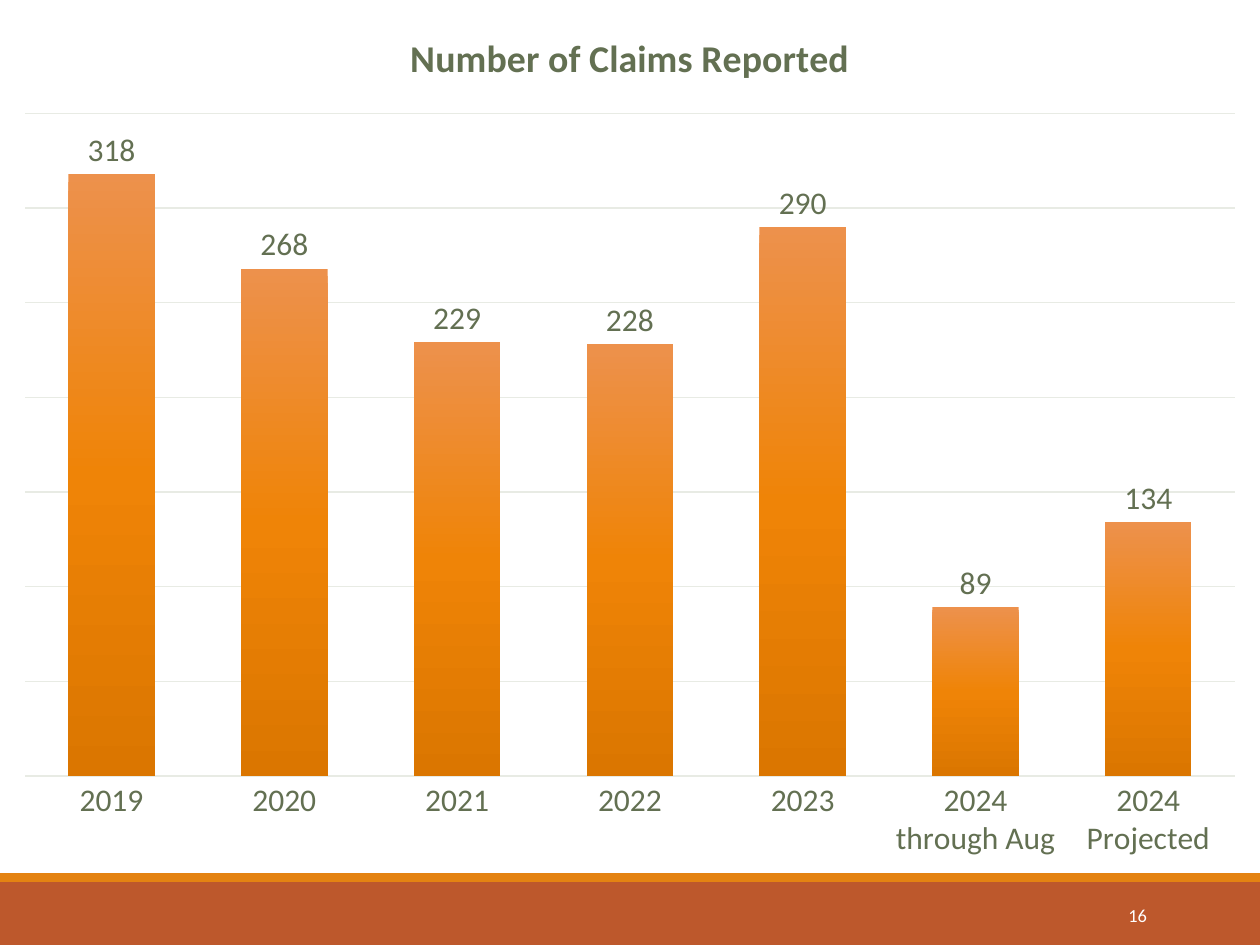
from lxml import etree
from pptx import Presentation
from pptx.chart.data import CategoryChartData
from pptx.dml.color import RGBColor
from pptx.enum.chart import XL_CHART_TYPE, XL_LABEL_POSITION, XL_TICK_MARK
from pptx.enum.shapes import MSO_SHAPE
from pptx.enum.text import MSO_ANCHOR, PP_ALIGN
from pptx.oxml.ns import qn
from pptx.util import Inches, Pt

COLUMNS = XL_CHART_TYPE.COLUMN_CLUSTERED
OUTSIDE_END = XL_LABEL_POSITION.OUTSIDE_END
NO_TICK = XL_TICK_MARK.NONE
RECTANGLE = MSO_SHAPE.RECTANGLE
MIDDLE = MSO_ANCHOR.MIDDLE
RIGHT = PP_ALIGN.RIGHT

FONT = "Calibri"
GREEN, PALE, WHITE = "637052", "E8EBE4", "FFFFFF"
RUST, ORANGE = "BD582C", "E48312"
COLUMN_STOPS = [(0, "ED914C"), (50, "EF8407"), (100, "DB7600")]
CLAIMS = {
    "2019": 318, "2020": 268, "2021": 229, "2022": 228, "2023": 290,
    "2024 through Aug": 89, "2024 Projected": 134,
}


def color(value):
    return RGBColor.from_string(value)


def add_element(parent, tag, **attributes):
    return etree.SubElement(parent, qn(tag), attributes)


def fill_gradient(fill, stops):
    """Fill from top to bottom with any number of (percent, color) stops."""
    fill.gradient()
    fill.gradient_angle = 270
    stop_list = fill.gradient_stops[0]._gs.getparent()
    for stop in list(stop_list):
        stop_list.remove(stop)
    for percent, value in stops:
        stop = add_element(stop_list, "a:gs", pos=str(percent * 1000))
        add_element(stop, "a:srgbClr", val=value)


def place_plot(chart, **fractions):
    """Fix the inner plot area, in fractions of the chart's size."""
    plot_area = chart._chartSpace.chart.plotArea
    for old in plot_area.findall(qn("c:layout")):
        plot_area.remove(old)
    layout = etree.Element(qn("c:layout"))
    plot_area.insert(0, layout)
    manual = add_element(layout, "c:manualLayout")
    add_element(manual, "c:layoutTarget", val="inner")
    for side in "xy":
        add_element(manual, f"c:{side}Mode", val="edge")
    for name, fraction in fractions.items():
        add_element(manual, f"c:{name}", val=str(fraction))


class SlideBuilder:
    def __init__(self, slide):
        self.slide = slide

    def style(self, font, size, value, bold=False):
        font.name, font.size, font.bold = FONT, Pt(size), bold
        font.color.rgb = color(value)

    def band(self, top, height, value):
        band = self.slide.shapes.add_shape(
            RECTANGLE, 0, Inches(top), Inches(10), Inches(height))
        band.shadow.inherit = False
        band.fill.solid()
        band.fill.fore_color.rgb = color(value)
        band.line.fill.background()

    def page_number(self, text, left, top, width, height):
        box = self.slide.shapes.add_textbox(
            Inches(left), Inches(top), Inches(width), Inches(height))
        frame = box.text_frame
        frame.word_wrap = True
        frame.vertical_anchor = MIDDLE
        frame.text = text
        para = frame.paragraphs[0]
        para.alignment = RIGHT
        self.style(para.runs[0].font, 10.5, WHITE)

    def column_chart(self, title, values, width, height):
        data = CategoryChartData(number_format="0")
        data.categories = list(values)
        data.add_series("Series 1", list(values.values()))
        chart = self.slide.shapes.add_chart(
            COLUMNS, 0, 0, Inches(width), Inches(height), data).chart
        self.style(chart.font, 18, GREEN)
        chart.has_legend = False
        chart.has_title = True
        chart.chart_title.include_in_layout = False
        frame = chart.chart_title.text_frame
        frame.text = title
        self.style(frame.paragraphs[0].runs[0].font, 21.6, GREEN, bold=True)
        place_plot(chart, x=0.02, y=0.13, w=0.96, h=0.76)
        self.axes(chart)
        self.columns(chart.plots[0])

    def axes(self, chart):
        categories, amounts = chart.category_axis, chart.value_axis
        amounts.visible = False
        amounts.minimum_scale, amounts.maximum_scale = 0, 350
        amounts.major_unit = 50
        amounts.has_major_gridlines = True
        categories.major_tick_mark = NO_TICK
        self.style(categories.tick_labels.font, 18, GREEN)
        for line in (amounts.major_gridlines.format.line, categories.format.line):
            line.color.rgb = color(PALE)
            line.width = Pt(0.75)

    def columns(self, plot):
        plot.gap_width, plot.overlap = 100, -24
        plot.vary_by_categories = False
        series = plot.series[0]
        fill_gradient(series.format.fill, COLUMN_STOPS)
        labels = series.data_labels
        labels.show_value = True
        labels.position = OUTSIDE_END
        labels.number_format, labels.number_format_is_linked = "0", False
        self.style(labels.font, 18, GREEN)


def main():
    deck = Presentation()
    deck.slide_width, deck.slide_height = Inches(10), Inches(7.5)
    blank_layout = deck.slide_layouts[6]
    builder = SlideBuilder(deck.slides.add_slide(blank_layout))
    builder.band(7, 0.5, RUST)
    builder.band(6.93, 0.07, ORANGE)
    builder.page_number("16", 8.12, 7.06, 1.08, 0.4)
    builder.column_chart("Number of Claims Reported", CLAIMS, 10, 6.92)
    deck.save("out.pptx")


if __name__ == "__main__":
    main()
